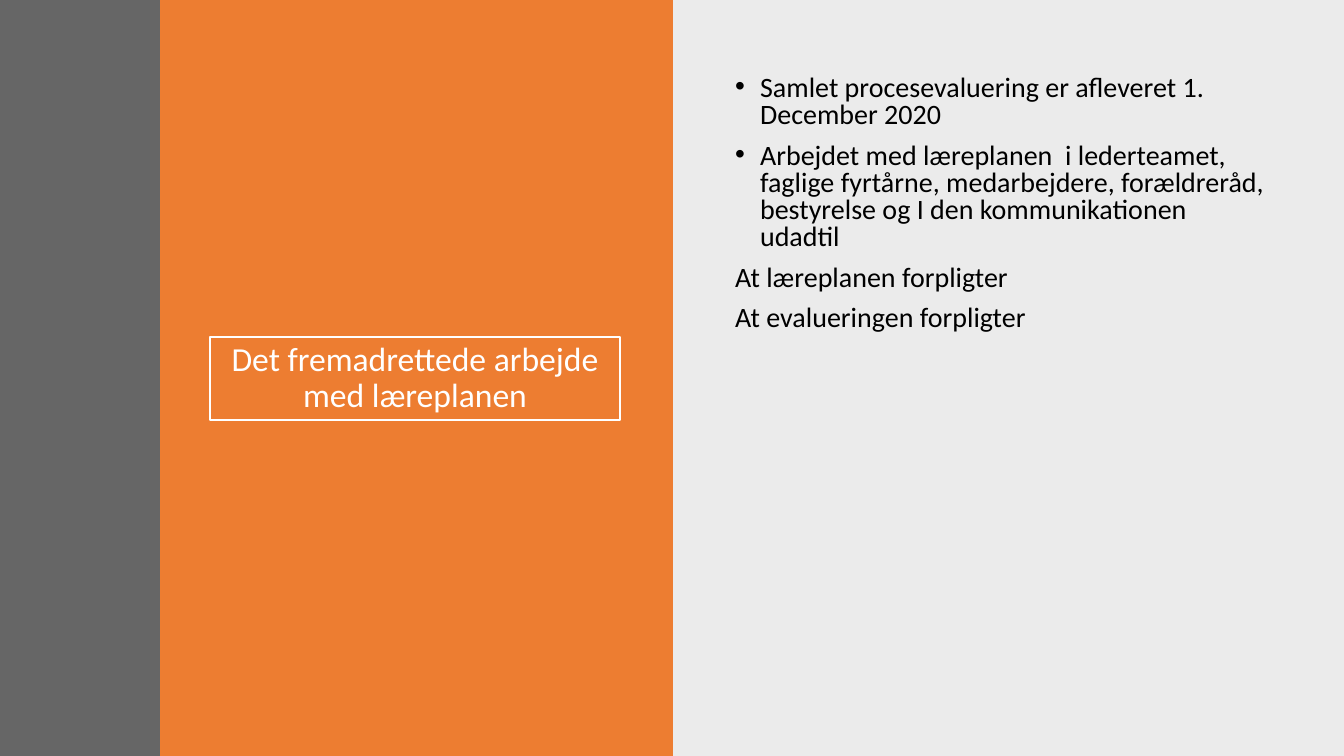
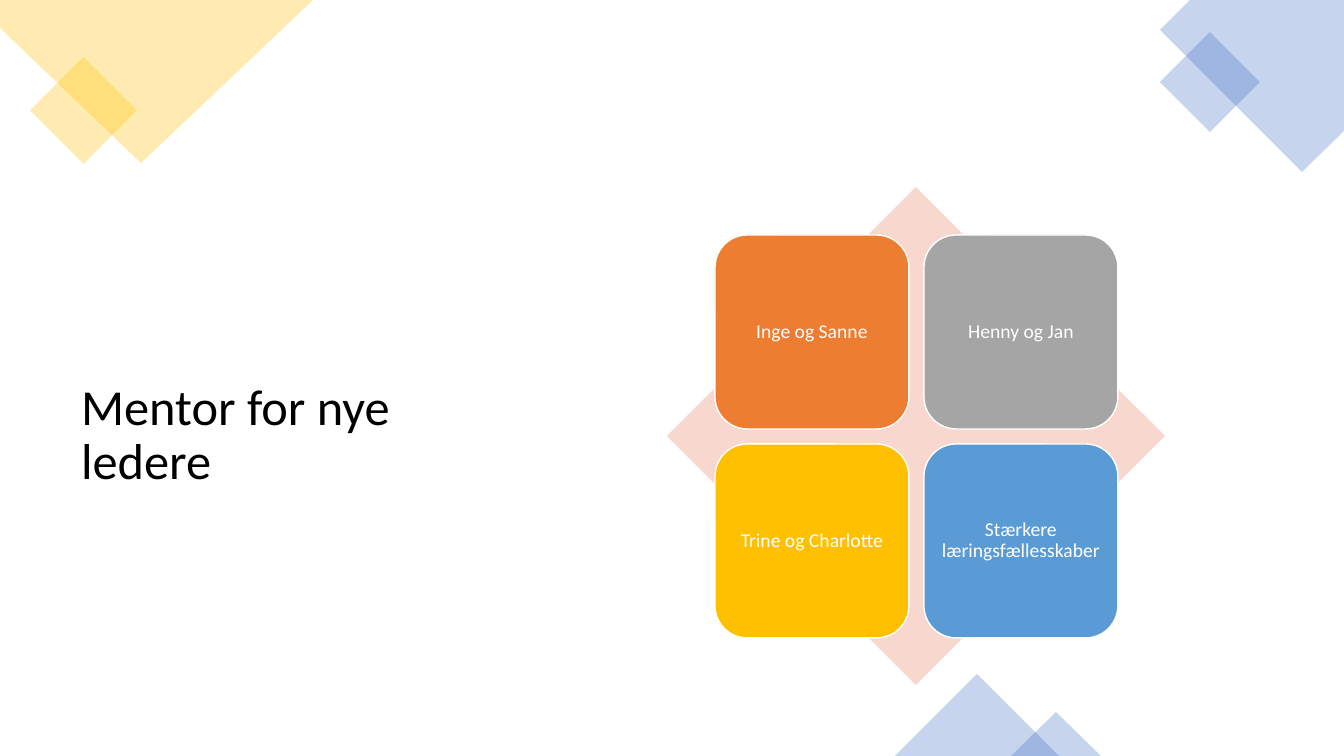
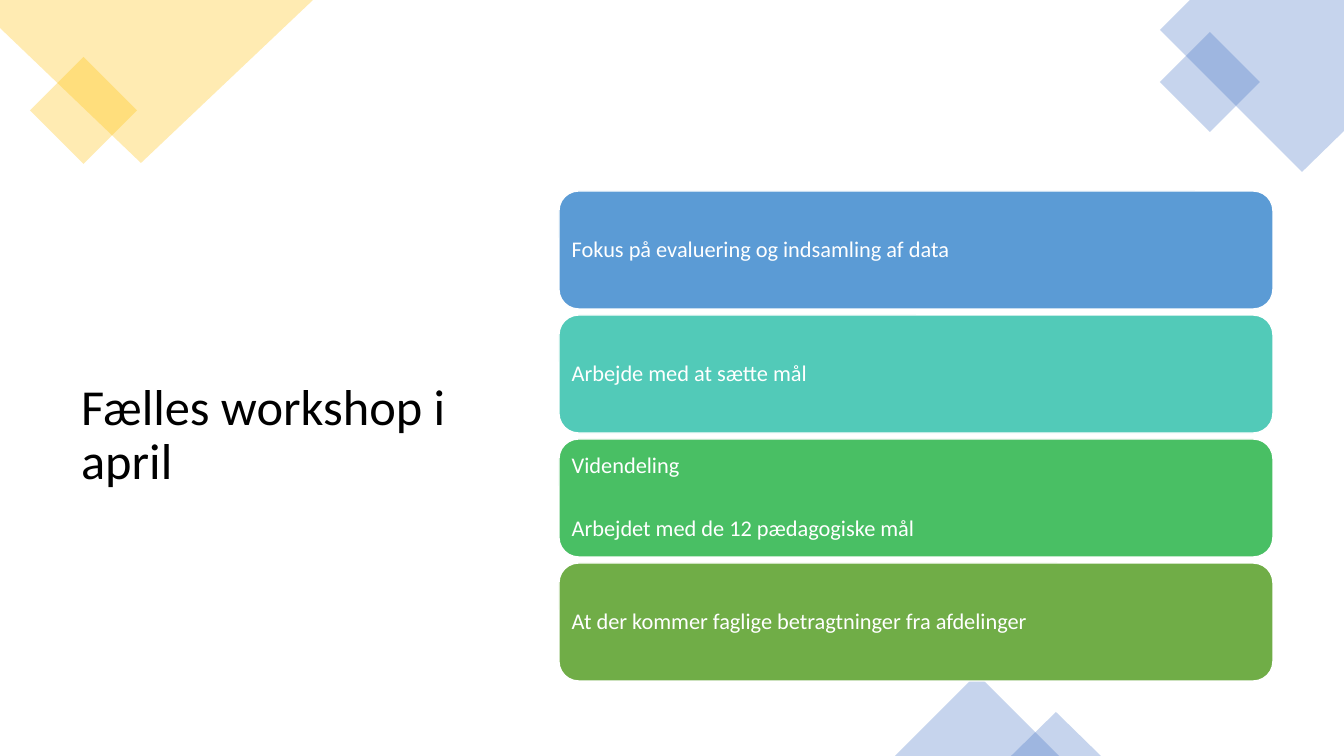
from lxml.etree import SubElement
from pptx import Presentation
from pptx.dml.color import RGBColor
from pptx.enum.shapes import MSO_SHAPE
from pptx.enum.text import MSO_ANCHOR, MSO_AUTO_SIZE, PP_ALIGN
from pptx.oxml.ns import qn
from pptx.util import Pt

WIDTH, HEIGHT = 1344, 756
EMU_PER_PX = 12192000 / WIDTH
FONT = "Calibri"
BLACK = RGBColor(0x00, 0x00, 0x00)
WHITE = RGBColor(0xFF, 0xFF, 0xFF)
CHARCOAL = RGBColor(0x40, 0x40, 0x40)
ORANGE = RGBColor(0xED, 0x7D, 0x31)
GOLD = RGBColor(0xFF, 0xC0, 0x00)
ROYAL = RGBColor(0x44, 0x72, 0xC4)
GRAY = RGBColor(0xA5, 0xA5, 0xA5)
SKY = RGBColor(0x5B, 0x9B, 0xD5)
TEAL = RGBColor(0x52, 0xCA, 0xB8)
GREEN = RGBColor(0x49, 0xBF, 0x64)
OLIVE = RGBColor(0x70, 0xAD, 0x47)
BLUSH = RGBColor(0xF8, 0xD7, 0xCE)


def px(length):
    return round(length * EMU_PER_PX)


def write(frame, text, size, color=WHITE, align=PP_ALIGN.LEFT, anchor=MSO_ANCHOR.MIDDLE,
          spacing=0.9, before=0, after=0, inset=None):
    frame.word_wrap = True
    frame.auto_size = MSO_AUTO_SIZE.NONE
    frame.vertical_anchor = anchor
    if inset is not None:
        frame.margin_left = frame.margin_right = px(inset)
        frame.margin_top = frame.margin_bottom = px(inset)
    for index, line in enumerate(text.split("\n")):
        paragraph = frame.add_paragraph() if index else frame.paragraphs[0]
        paragraph.alignment = align
        paragraph.line_spacing = spacing
        paragraph.space_before = Pt(before)
        paragraph.space_after = Pt(after)
        run = paragraph.add_run()
        run.text = line
        run.font.name = FONT
        run.font.size = Pt(size)
        run.font.color.rgb = color


class Deck:
    def __init__(self):
        self.presentation = Presentation()
        self.presentation.slide_width = px(WIDTH)
        self.presentation.slide_height = px(HEIGHT)
        self.slide = None

    def new_slide(self, layout):
        self.slide = self.presentation.slides.add_slide(
            self.presentation.slide_layouts.get_by_name(layout))

    def place(self, placeholder, box):
        placeholder.left, placeholder.top, placeholder.width, placeholder.height = map(px, box)
        placeholder.element.getparent().append(placeholder.element)

    def title(self, text, box=(71, 187, 436, 498), size=36, color=BLACK,
              align=PP_ALIGN.LEFT, outline=None):
        heading = self.slide.shapes.title
        self.place(heading, box)
        write(heading.text_frame, text, size, color, align)
        if outline:
            heading.line.color.rgb = outline
            heading.line.width = Pt(2)

    def body(self, text, box, bulleted):
        content = self.slide.placeholders[1]
        self.place(content, box)
        write(content.text_frame, text, 20, BLACK, anchor=MSO_ANCHOR.TOP, spacing=0.8, before=10)
        for index, paragraph in enumerate(content.text_frame.paragraphs):
            properties = paragraph._p.get_or_add_pPr()
            hanging = px(25) if index < bulleted else 0
            properties.set("marL", str(hanging))
            properties.set("indent", str(-hanging))
            if not hanging:
                SubElement(properties, qn("a:buNone"))

    def paint(self, shape, color, opacity=100, outline=None):
        shape.shadow.inherit = False
        shape.fill.solid()
        shape.fill.fore_color.rgb = color
        if opacity < 100:
            tint = shape.element.spPr.find(".//" + qn("a:srgbClr"))
            SubElement(tint, qn("a:alpha")).set("val", str(opacity * 1000))
        if outline:
            shape.line.color.rgb = outline
            shape.line.width = Pt(1)
        else:
            shape.line.fill.background()

    def shape(self, preset, box, color, opacity=100, outline=None):
        shape = self.slide.shapes.add_shape(preset, *map(px, box))
        self.paint(shape, color, opacity, outline)
        return shape

    def polygon(self, points, color, opacity):
        start, *rest = [(px(x), px(y)) for x, y in points]
        outline = self.slide.shapes.build_freeform(*start)
        outline.add_line_segments(rest, close=True)
        self.paint(outline.convert_to_shape(), color, opacity)

    def card(self, text, box, color, **text_format):
        card = self.shape(MSO_SHAPE.ROUNDED_RECTANGLE, box, color, outline=WHITE)
        write(card.text_frame, text, **text_format)

    def corners(self):
        self.shape(MSO_SHAPE.DIAMOND, (30, 57, 107, 107), GOLD, 30)
        self.polygon([(0, 0), (313, 0), (141, 163), (0, 28)], GOLD, 30)
        self.polygon([(1190, 0), (1344, 0), (1344, 131), (1302, 172), (1160, 30)], ROYAL, 30)
        self.shape(MSO_SHAPE.DIAMOND, (1160, 32, 100, 100), ROYAL, 30)
        for peak in ((895, 674, 164, 82), (1011, 712, 90, 44)):
            self.shape(MSO_SHAPE.ISOSCELES_TRIANGLE, peak, ROYAL, 30)


def learning_plan(deck):
    deck.new_slide("Title and Content")
    deck.shape(MSO_SHAPE.RECTANGLE, (673, 0, 671, HEIGHT), BLACK, 8)
    deck.shape(MSO_SHAPE.RECTANGLE, (160, 0, 513, HEIGHT), ORANGE)
    deck.shape(MSO_SHAPE.RECTANGLE, (0, 0, 160, HEIGHT), CHARCOAL, 80)
    deck.title("Det fremadrettede arbejde med læreplanen", (210, 337, 410, 83), 24,
               WHITE, PP_ALIGN.CENTER, outline=WHITE)
    deck.body("Samlet procesevaluering er afleveret 1. December 2020\n"
              "Arbejdet med læreplanen  i lederteamet, faglige fyrtårne, medarbejdere, "
              "forældreråd, bestyrelse og I den kommunikationen udadtil\n"
              "At læreplanen forpligter\n"
              "At evalueringen forpligter", (725, 71, 557, 281), bulleted=2)


def mentors(deck):
    deck.new_slide("Title Only")
    deck.title("Mentor for nye ledere")
    deck.corners()
    deck.shape(MSO_SHAPE.DIAMOND, (667, 187, 498, 498), BLUSH)
    tile, pitch = 194, 209
    pairs = [("Inge og Sanne", ORANGE), ("Henny og Jan", GRAY),
             ("Trine og Charlotte", GOLD), ("Stærkere læringsfællesskaber", SKY)]
    for index, (names, color) in enumerate(pairs):
        row, column = divmod(index, 2)
        deck.card(names, (715 + column * pitch, 235 + row * pitch, tile, tile), color,
                  size=14, align=PP_ALIGN.CENTER, inset=6)


def workshop(deck):
    deck.new_slide("Title Only")
    deck.title("Fælles workshop i april")
    deck.corners()
    topics = [("Fokus på evaluering og indsamling af data", SKY),
              ("Arbejde med at sætte mål", TEAL),
              ("Videndeling\nArbejdet med de 12 pædagogiske mål", GREEN),
              ("At der kommer faglige betragtninger fra afdelinger", OLIVE)]
    for index, (topic, color) in enumerate(topics):
        deck.card(topic, (559, 191 + index * 124, 714, 118), color, size=16, after=28, inset=7)


def main():
    deck = Deck()
    for build in (learning_plan, mentors, workshop):
        build(deck)
    deck.presentation.save("out.pptx")


if __name__ == "__main__":
    main()
